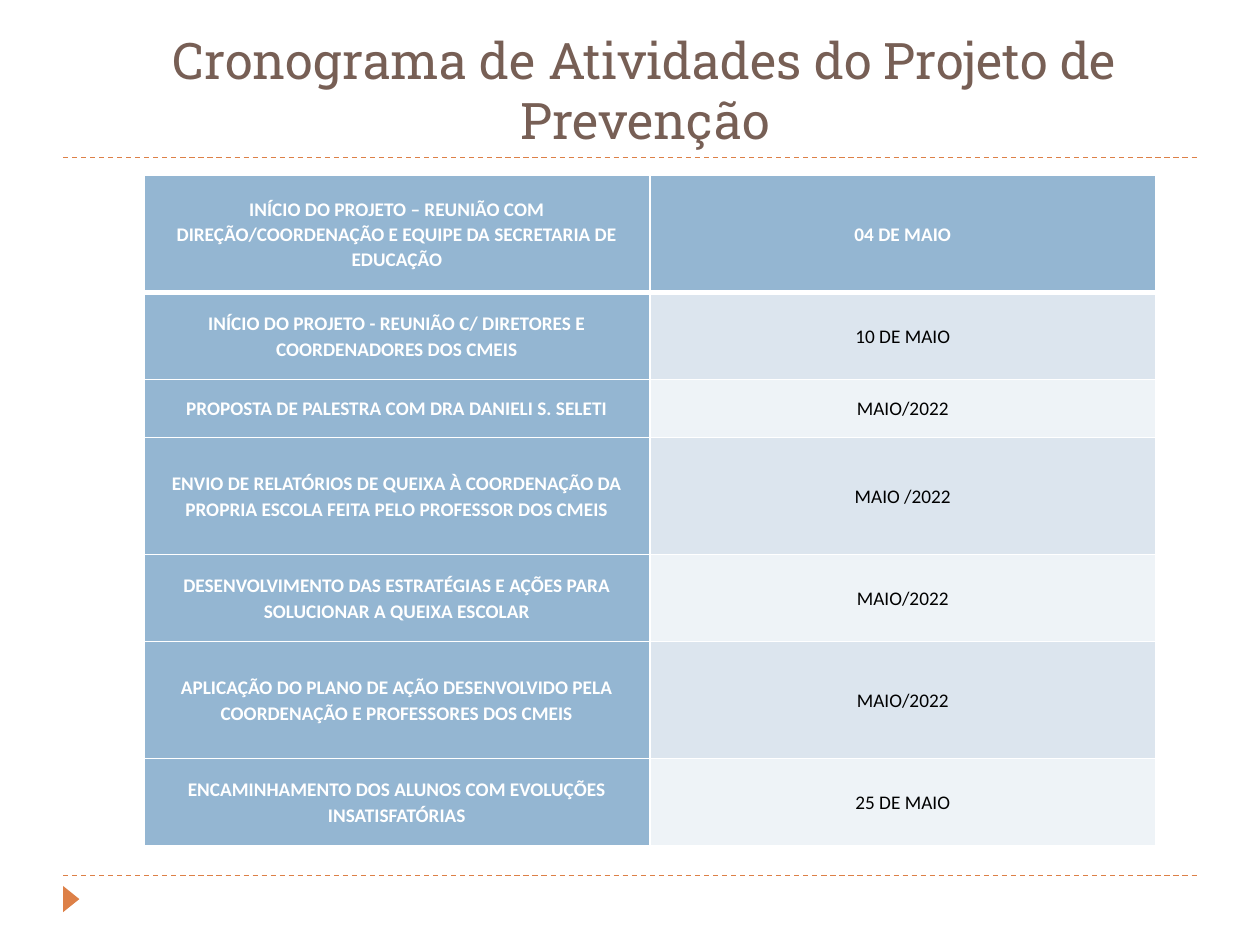
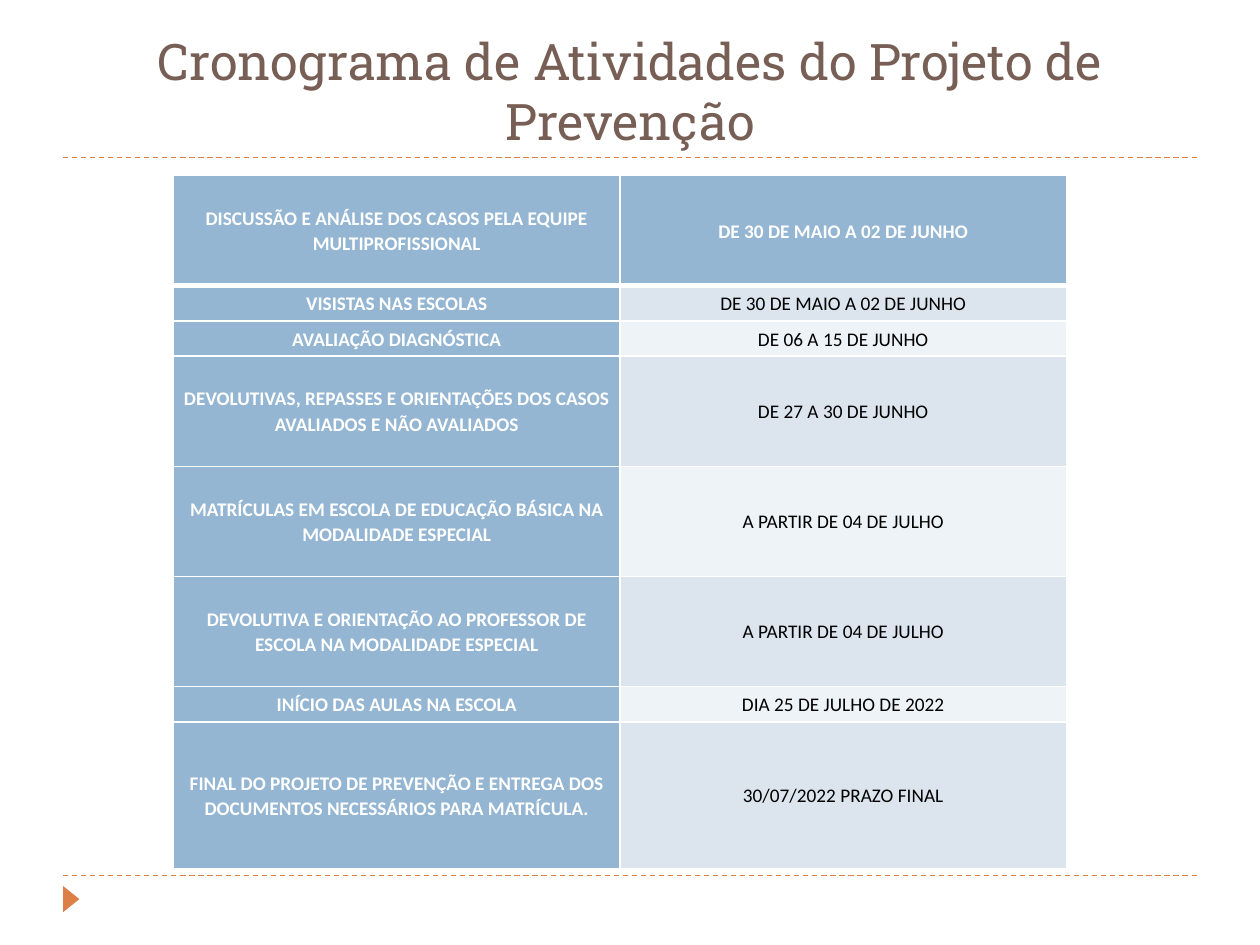
from lxml import etree
from pptx import Presentation
from pptx import util as u
from pptx.dml import color
from pptx.enum import dml, shapes, text
from pptx.oxml import ns

# Shared look
ORANGE, BROWN, BLUE = "DD8047", "775F55", "94B6D2"
BANDS = ["DCE5EE", "EEF3F7"]
WHITE, BLACK = "FFFFFF", "000000"
TITLE = "Cronograma de Atividades do Projeto de Prevenção"
TITLE_FONT = {"name": "Roboto Slab", "size": u.Pt(28.8), "bold": False}
TITLE_PARA = {"alignment": text.PP_ALIGN.CENTER, "line_spacing": 1.0}
TITLE_FRAME = {"word_wrap": True, "auto_size": text.MSO_AUTO_SIZE.NONE,
               "vertical_anchor": text.MSO_ANCHOR.BOTTOM}
CELL_FORMAT = {"vertical_anchor": text.MSO_ANCHOR.MIDDLE,
               "margin_left": u.Cm(0.18), "margin_right": u.Cm(0.18),
               "margin_top": 0, "margin_bottom": 0}
CELL_PARA = {"alignment": text.PP_ALIGN.CENTER, "line_spacing": 1.07}

# Schedules: title position, table left, column width, rows (height, activity, date)
SCHEDULES = [
    {"title": (1.57, 0.41), "left": 2.9, "column": 10.2, "rows": [
        (2.36, "INÍCIO DO PROJETO – REUNIÃO COM DIREÇÃO/COORDENAÇÃO E EQUIPE DA SECRETARIA DE EDUCAÇÃO",
         "04 DE MAIO"),
        (1.75, "INÍCIO DO PROJETO - REUNIÃO C/ DIRETORES E COORDENADORES DOS CMEIS", "10 DE MAIO"),
        (1.17, "PROPOSTA DE PALESTRA COM DRA DANIELI S. SELETI", "MAIO/2022"),
        (2.36, "ENVIO DE RELATÓRIOS DE QUEIXA À COORDENAÇÃO DA PROPRIA ESCOLA FEITA PELO PROFESSOR DOS CMEIS",
         "MAIO /2022"),
        (1.75, "DESENVOLVIMENTO DAS ESTRATÉGIAS E AÇÕES PARA SOLUCIONAR A QUEIXA ESCOLAR", "MAIO/2022"),
        (2.36, "APLICAÇÃO DO PLANO DE AÇÃO DESENVOLVIDO PELA COORDENAÇÃO E PROFESSORES DOS CMEIS",
         "MAIO/2022"),
        (1.75, "ENCAMINHAMENTO DOS ALUNOS COM EVOLUÇÕES INSATISFATÓRIAS", "25 DE MAIO"),
    ]},
    {"title": (1.27, 0.43), "left": 3.5, "column": 9, "rows": [
        (2.22, "DISCUSSÃO E ANÁLISE DOS CASOS PELA EQUIPE MULTIPROFISSIONAL", "DE 30 DE MAIO A 02 DE JUNHO"),
        (0.71, "VISISTAS NAS ESCOLAS", "DE 30 DE MAIO A 02 DE JUNHO"),
        (0.71, "AVALIAÇÃO DIAGNÓSTICA", "DE 06 A 15 DE JUNHO"),
        (2.22, "DEVOLUTIVAS, REPASSES E ORIENTAÇÕES DOS CASOS AVALIADOS E NÃO AVALIADOS",
         "DE 27 A 30 DE JUNHO"),
        (2.22, "MATRÍCULAS EM ESCOLA DE EDUCAÇÃO BÁSICA NA MODALIDADE ESPECIAL", "A PARTIR DE 04 DE JULHO"),
        (2.22, "DEVOLUTIVA E ORIENTAÇÃO AO PROFESSOR DE ESCOLA NA MODALIDADE ESPECIAL",
         "A PARTIR DE 04 DE JULHO"),
        (0.71, "INÍCIO DAS AULAS NA ESCOLA", "DIA 25 DE JULHO DE 2022"),
        (2.97, "FINAL DO PROJETO DE PREVENÇÃO E ENTREGA DOS DOCUMENTOS NECESSÁRIOS PARA MATRÍCULA.",
         "30/07/2022 PRAZO FINAL"),
    ]},
]


def paint(fill, hex_color):
    fill.solid()
    fill.fore_color.rgb = color.RGBColor.from_string(hex_color)


def apply(target, formats):
    for name, value in formats.items():
        setattr(target, name, value)


deck = Presentation()
deck.slide_width, deck.slide_height = u.Cm(25.4), u.Cm(19.05)

for schedule in SCHEDULES:
    page = deck.slides.add_slide(deck.slide_layouts[5])

    # Dashed rules above and below the content
    for y in (17.65, 3.18):
        rule = page.shapes.add_connector(shapes.MSO_CONNECTOR.STRAIGHT,
                                         u.Cm(1.27), u.Cm(y), u.Cm(24.13), u.Cm(y))
        paint(rule.line.fill, ORANGE)
        apply(rule.line, {"width": u.Pt(0.75), "dash_style": dml.MSO_LINE.DASH})
        etree.SubElement(rule._element.spPr, ns.qn("a:effectLst"))

    # Footer arrow
    arrow = page.shapes.add_shape(shapes.MSO_SHAPE.ISOSCELES_TRIANGLE,
                                  u.Cm(1.17), u.Cm(17.96), u.Cm(0.53), u.Cm(0.33))
    arrow.rotation = 90
    arrow.shadow.inherit = False
    paint(arrow.fill, ORANGE)
    arrow.line.fill.background()

    # Title
    title = page.shapes.title
    left, top = schedule["title"]
    apply(title, {"left": u.Cm(left), "top": u.Cm(top), "width": u.Cm(22.86), "height": u.Cm(2.74)})
    apply(title.text_frame, TITLE_FRAME)
    para = title.text_frame.paragraphs[0]
    apply(para, TITLE_PARA)
    span = para.add_run()
    span.text = TITLE
    apply(span.font, TITLE_FONT)
    paint(span.font.fill, BROWN)

    # Schedule table
    rows = schedule["rows"]
    table = page.shapes.add_table(len(rows), 2, u.Cm(schedule["left"]), u.Cm(3.54),
                                  u.Cm(2 * schedule["column"]),
                                  u.Cm(sum(row[0] for row in rows))).table
    table.first_col = True
    for column in table.columns:
        column.width = u.Cm(schedule["column"])

    for row_index, (height, *labels) in enumerate(rows):
        table.rows[row_index].height = u.Cm(height)
        for column_index, label in enumerate(labels):
            cell = table.cell(row_index, column_index)
            heading = row_index == 0 or column_index == 0
            apply(cell, CELL_FORMAT)

            # White borders, heavier under the first row
            borders = {"lnL": 1, "lnR": 1, "lnT": 3 if row_index == 1 else 1,
                       "lnB": 3 if row_index == 0 else 1}
            for side, points in borders.items():
                border = etree.SubElement(cell._tc.get_or_add_tcPr(), ns.qn(f"a:{side}"),
                                          w=str(u.Pt(points)))
                fill = etree.SubElement(border, ns.qn("a:solidFill"))
                etree.SubElement(fill, ns.qn("a:srgbClr"), val=WHITE)
            paint(cell.fill, BLUE if heading else BANDS[(row_index - 1) % 2])

            para = cell.text_frame.paragraphs[0]
            apply(para, CELL_PARA)
            span = para.add_run()
            span.text = label
            apply(span.font, {"name": "Calibri", "size": u.Pt(11), "bold": heading})
            paint(span.font.fill, WHITE if heading else BLACK)

deck.save("out.pptx")
